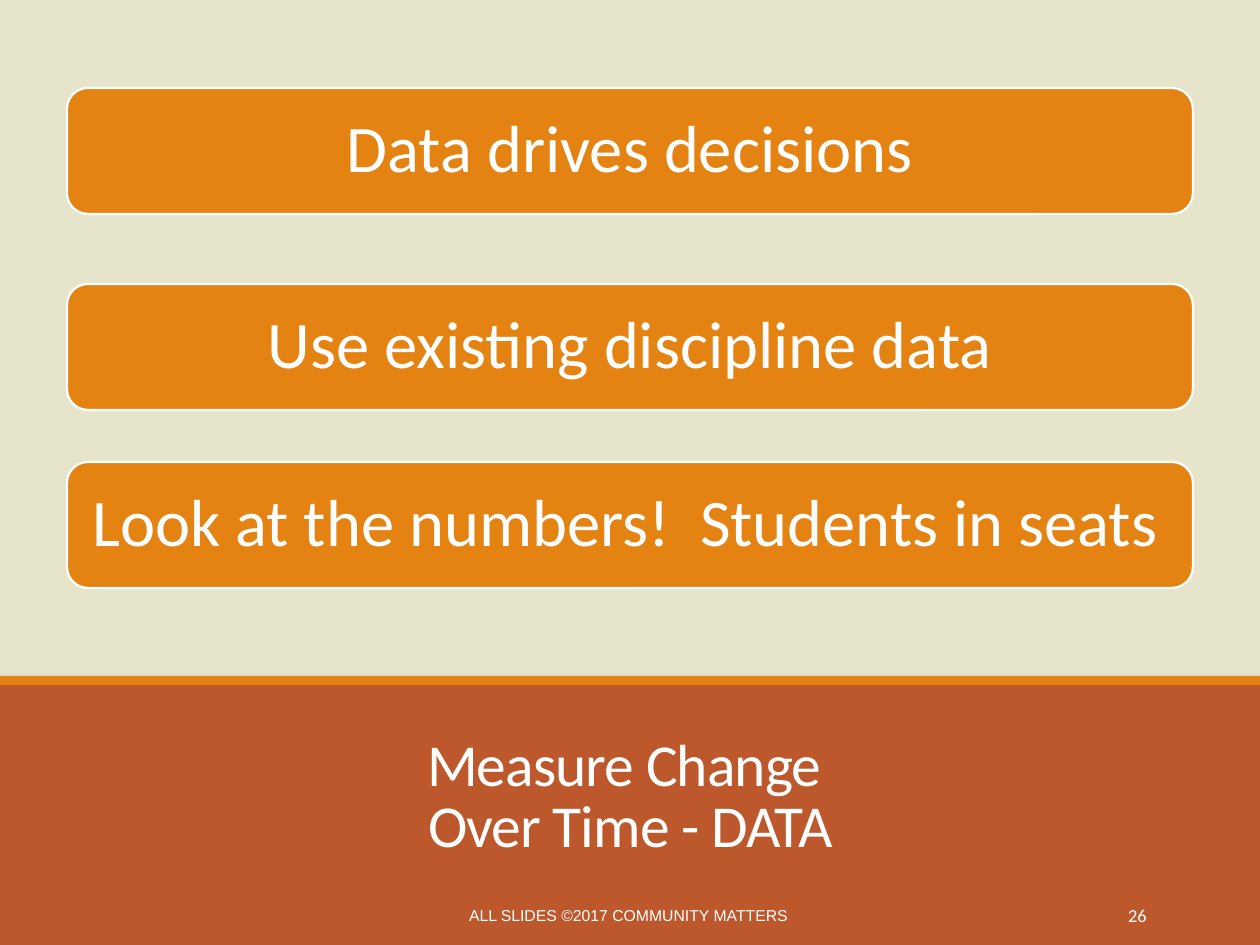
"""Build the 'Measure Change Over Time' data slide."""
from pptx import Presentation
from pptx.dml.color import RGBColor
from pptx.enum.shapes import MSO_SHAPE
from pptx.enum.text import MSO_ANCHOR, MSO_AUTO_SIZE, PP_ALIGN
from pptx.util import Emu, Pt

LEFT, CENTER, RIGHT = PP_ALIGN.LEFT, PP_ALIGN.CENTER, PP_ALIGN.RIGHT
MIDDLE, BOTTOM = MSO_ANCHOR.MIDDLE, MSO_ANCHOR.BOTTOM
RECTANGLE, ROUNDED = MSO_SHAPE.RECTANGLE, MSO_SHAPE.ROUNDED_RECTANGLE
NO_AUTOFIT = MSO_AUTO_SIZE.NONE

EMU_PER_PX = 914400 // 126
SAND, RUST, ORANGE, WHITE = "E7E4CC", "BD582C", "E48312", "FFFFFF"

TITLE_LINES = ["Measure Change ", "Over Time - DATA"]
TITLE_BOX = (111, 724, 1039, 142)
BANDS = [
    (RUST, (0, 683, 1260, 262)),
    (ORANGE, (0, 676, 1260, 9)),
]
CARD_LEFT, CARD_WIDTH, CARD_HEIGHT, CARD_INSET = 67, 1126, 126, 19
CARDS = [
    ("Data drives decisions", 88, CENTER),
    ("Use existing discipline data", 284, CENTER),
    ("Look at the numbers!  Students in seats", 462, LEFT),
]
FOOTERS = [
    ("ALL SLIDES ©2017 COMMUNITY MATTERS ", (381, 890, 499, 50), CENTER, "Arial", 9),
    ("26", (1023, 890, 136, 50), RIGHT, "Calibri", 10.5),
]


def px(value):
    return Emu(value * EMU_PER_PX)


def color(value):
    return RGBColor.from_string(value)


def place(box):
    return [px(value) for value in box]


def assign(target, values):
    for name, value in values.items():
        setattr(target, name, value)


def write(shape, lines, size, align, anchor=MIDDLE, font="Calibri", spacing=1.0, tracking=0):
    frame = shape.text_frame
    assign(frame, {"word_wrap": True, "auto_size": NO_AUTOFIT, "vertical_anchor": anchor})
    paragraph = frame.paragraphs[0]
    assign(paragraph, {"alignment": align, "line_spacing": spacing, "space_before": Pt(0)})
    for index, line in enumerate(lines):
        if index:
            paragraph.add_line_break()
        run = paragraph.add_run()
        run.text = line
        assign(run.font, {"name": font, "size": Pt(size), "bold": False})
        run.font.color.rgb = color(WHITE)
        if tracking:
            run.font._element.set("spc", str(tracking))


def add_block(slide, kind, box, fill):
    shape = slide.shapes.add_shape(kind, *place(box))
    shape.shadow.inherit = False
    shape.fill.solid()
    shape.fill.fore_color.rgb = color(fill)
    shape.line.fill.background()
    return shape


def add_card(slide, text, top, align):
    card = add_block(slide, ROUNDED, (CARD_LEFT, top, CARD_WIDTH, CARD_HEIGHT), ORANGE)
    card.line.color.rgb = color(WHITE)
    card.line.width = Pt(1.25)
    sides = ("left", "top", "right", "bottom")
    assign(card.text_frame, {f"margin_{side}": px(CARD_INSET) for side in sides})
    write(card, [text], 38, align, spacing=0.9)


def main():
    presentation = Presentation()
    assign(presentation, {"slide_width": px(1260), "slide_height": px(945)})
    slide = presentation.slides.add_slide(presentation.slide_layouts[5])
    slide.background.fill.solid()
    slide.background.fill.fore_color.rgb = color(SAND)

    for fill, box in BANDS:
        add_block(slide, RECTANGLE, box, fill)

    title = slide.shapes.title
    assign(title, dict(zip(("left", "top", "width", "height"), place(TITLE_BOX))))
    write(title, TITLE_LINES, 34, CENTER, BOTTOM, spacing=0.85, tracking=-50)
    slide.shapes._spTree.append(title._element)

    for text, top, align in CARDS:
        add_card(slide, text, top, align)
    for text, box, align, font, size in FOOTERS:
        write(slide.shapes.add_textbox(*place(box)), [text], size, align, font=font)

    presentation.save("out.pptx")


if __name__ == "__main__":
    main()
